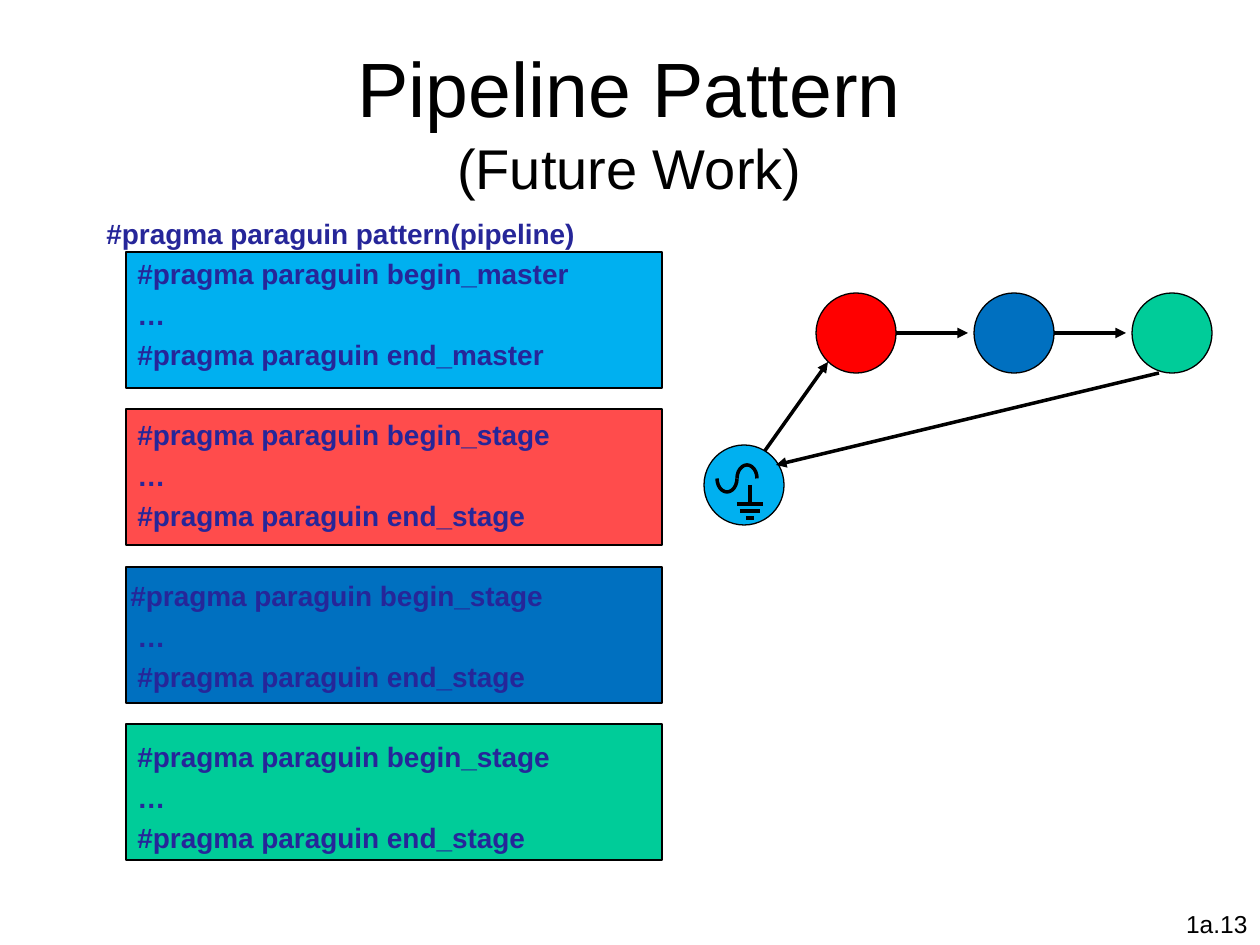
from lxml import etree
from pptx import Presentation
from pptx import util as u
from pptx.dml.color import RGBColor
from pptx.enum import shapes, text
from pptx.oxml.ns import qn

COLORS = {
    "black": "000000",
    "code": "262699",
    "master": "00B0F0",
    "red": "FF0000",
    "blue": "0070C0",
    "green": "00CC99",
}
FONT = "Arial"
CIRCLE = 80


def px(length):
    return u.Emu(round(length * 914400 / 126))


class SlideBuilder:
    def __init__(self, slide):
        self.slide = slide

    def color(self, name):
        return RGBColor.from_string(COLORS[name])

    def text_box(self, x, y, w, h, anchor=text.MSO_ANCHOR.TOP):
        frame = self.slide.shapes.add_textbox(px(x), px(y), px(w), px(h)).text_frame
        frame.word_wrap = True
        frame.auto_size = text.MSO_AUTO_SIZE.NONE
        frame.vertical_anchor = anchor
        return frame

    def run(self, paragraph, words, size, color="black", bold=False):
        run = paragraph.add_run()
        run.text = words
        run.font.name = FONT
        run.font.size = u.Pt(size)
        run.font.bold = bold
        run.font.color.rgb = self.color(color)

    def code_line(self, paragraph, words, indent, before):
        paragraph.space_before = u.Pt(before)
        paragraph._p.get_or_add_pPr().set("marL", str(px(indent)))
        self.run(paragraph, words, 16, "code", True)

    def shape(self, kind, x, y, w, h, fill=None, width=0.75, alpha=None):
        shape = self.slide.shapes.add_shape(kind, px(x), px(y), px(w), px(h))
        shape.shadow.inherit = False
        if fill:
            shape.fill.solid()
            shape.fill.fore_color.rgb = self.color(fill)
        else:
            shape.fill.background()
        if alpha:
            srgb = shape.fill._xPr.find(".//" + qn("a:srgbClr"))
            etree.SubElement(srgb, qn("a:alpha"), val=str(alpha * 1000))
        shape.line.color.rgb = self.color("black")
        shape.line.width = u.Pt(width)
        return shape

    def circle(self, x, y, fill):
        self.shape(shapes.MSO_SHAPE.OVAL, x, y, CIRCLE, CIRCLE, fill)

    def half_wave(self, x, y, flipped=False):
        arc = self.shape(shapes.MSO_SHAPE.ARC, x, y, 20, 27, width=2)
        arc.adjustments[0] = 108.06
        arc.adjustments[1] = 0
        if flipped:
            arc._element.spPr.find(qn("a:xfrm")).set("flipV", "1")

    def line(self, x1, y1, x2, y2, arrow=False):
        line = self.slide.shapes.add_connector(
            shapes.MSO_CONNECTOR.STRAIGHT, px(x1), px(y1), px(x2), px(y2))
        line.line.color.rgb = self.color("black")
        line.line.width = u.Pt(2)
        if arrow:
            etree.SubElement(line.line._get_or_add_ln(), qn("a:tailEnd"), type="triangle")
        etree.SubElement(line._element.spPr, qn("a:effectLst"))


def main():
    deck = Presentation()
    deck.slide_width, deck.slide_height = px(1260), px(945)
    page = SlideBuilder(deck.slides.add_slide(deck.slide_layouts[6]))

    sections = [("master", "master", None, 31), ("stage", "red", 70, 31),
                ("stage", "blue", None, 24), ("stage", "green", None, 31)]
    for i, (_, fill, alpha, _) in enumerate(sections):
        page.shape(shapes.MSO_SHAPE.RECTANGLE, 126, 252 + i * 315 // 2, 536, 136,
                   fill, alpha=alpha)

    title = page.text_box(94, 42, 1071, 157, text.MSO_ANCHOR.MIDDLE)
    title.margin_top = title.margin_bottom = 0
    heading = title.paragraphs[0]
    heading.alignment = text.PP_ALIGN.CENTER
    page.run(heading, "Pipeline Pattern", 44)
    heading.add_line_break()
    page.run(heading, "(Future Work)", 32)

    code = page.text_box(94, 210, 1071, 672)
    page.code_line(code.paragraphs[0], "#pragma paraguin pattern(pipeline)", 0, 4)
    for i, (role, _, _, first_indent) in enumerate(sections):
        section_gap = 26.4 if i else 4
        page.code_line(code.add_paragraph(), f"#pragma paraguin begin_{role}",
                       first_indent, section_gap)
        page.code_line(code.add_paragraph(), "…", 31, 4)
        page.code_line(code.add_paragraph(), f"#pragma paraguin end_{role}", 31, 4)

    page_number = page.text_box(998, 903, 262, 63).paragraphs[0]
    page_number.alignment = text.PP_ALIGN.RIGHT
    page.run(page_number, "1a.13", 14)

    for i, fill in enumerate(["red", "blue", "green"]):
        page.circle(816 + i * 158, 293, fill)
    page.line(764, 452, 828, 362, arrow=True)
    page.circle(704, 445, "master")

    page.half_wave(737, 465)
    page.half_wave(717, 465, flipped=True)
    page.line(750, 485, 750, 504)
    for y, half_width in [(504, 13), (511, 10), (518, 4)]:
        page.line(750 - half_width, y, 750 + half_width, y)

    for x in (896, 1054):
        page.line(x, 333, x + 72, 333, arrow=True)
    page.line(1159, 373, 776, 465, arrow=True)

    deck.save("out.pptx")


if __name__ == "__main__":
    main()
